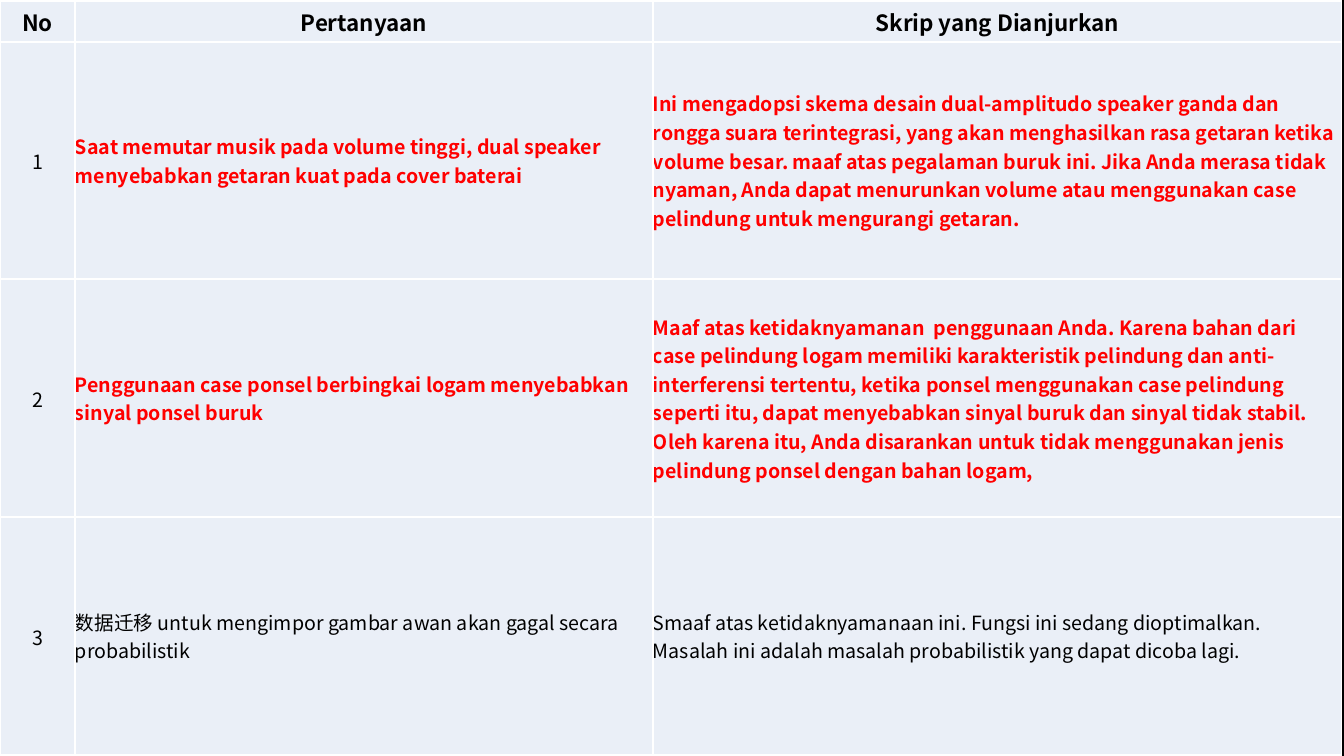
from pptx import Presentation
from pptx.dml.color import RGBColor
from pptx.enum import text
from pptx.oxml import parse_xml
from pptx.oxml.ns import nsdecls, qn
from pptx.util import Emu, Pt

HEADERS = ("No", "Pertanyaan", "Skrip yang Dianjurkan")
# question, recommended script, highlighted
ENTRIES = [
    ("Saat memutar musik pada volume tinggi, dual speaker menyebabkan getaran kuat "
     "pada cover baterai",
     "Ini mengadopsi skema desain dual-amplitudo speaker ganda dan rongga suara "
     "terintegrasi, yang akan menghasilkan rasa getaran ketika volume besar. maaf atas "
     "pegalaman buruk ini. Jika Anda merasa tidak nyaman, Anda dapat menurunkan volume "
     "atau menggunakan case pelindung untuk mengurangi getaran.",
     True),
    ("Penggunaan case ponsel berbingkai logam menyebabkan sinyal ponsel buruk",
     "Maaf atas ketidaknyamanan  penggunaan Anda. Karena bahan dari case pelindung logam "
     "memiliki karakteristik pelindung dan anti-interferensi tertentu, ketika ponsel "
     "menggunakan case pelindung seperti itu, dapat menyebabkan sinyal buruk dan sinyal "
     "tidak stabil. Oleh karena itu, Anda disarankan untuk tidak menggunakan jenis "
     "pelindung ponsel dengan bahan logam,",
     True),
    ("数据迁移 untuk mengimpor gambar awan akan gagal secara probabilistik",
     "Smaaf atas ketidaknyamanaan ini. Fungsi ini sedang dioptimalkan. Masalah ini adalah "
     "masalah probabilistik yang dapat dicoba lagi.",
     False),
]

FONT = "Noto Sans CJK SC"
BLACK, RED, WHITE, PALE_BLUE = "000000", "FF0000", "FFFFFF", "EAEFF7"
SLIDE_SIZE = (1344, 756)
TABLE_TOP = 1
COLUMN_WIDTHS = (75, 578, 689)
ROW_HEIGHTS = (41, 237, 238, 238)


def px(length):
    return Emu(round(length * 914400 / 100.8))


def color(value):
    return RGBColor.from_string(value)


def add_borders(cell):
    """Draw a 1 pt white line on all four sides, ahead of the cell's fill."""
    properties = cell._tc.get_or_add_tcPr()
    for index, side in enumerate(("lnL", "lnR", "lnT", "lnB")):
        properties.insert(index, parse_xml(
            f'<a:{side} {nsdecls("a")} w="{Pt(1)}"><a:solidFill>'
            f'<a:srgbClr val="{WHITE}"/></a:solidFill></a:{side}>'))


def fill_cell(cell, content, size, bold, ink, centered):
    cell.fill.solid()
    cell.fill.fore_color.rgb = color(PALE_BLUE)
    add_borders(cell)
    cell.vertical_anchor = text.MSO_ANCHOR.MIDDLE
    cell.margin_left = cell.margin_right = cell.margin_top = px(1 if centered else 0)
    cell.margin_bottom = 0

    cell.text_frame.text = content
    paragraph = cell.text_frame.paragraphs[0]
    paragraph.alignment = text.PP_ALIGN.CENTER if centered else text.PP_ALIGN.LEFT
    run = paragraph.runs[0]
    run.font.name = FONT
    run.font.size = Pt(size)
    run.font.bold = bold
    run.font.color.rgb = color(ink)
    east_asian = parse_xml(f'<a:ea {nsdecls("a")} typeface="{FONT}"/>')
    run._r.rPr.find(qn("a:latin")).addnext(east_asian)


def main():
    presentation = Presentation()
    presentation.slide_width, presentation.slide_height = map(px, SLIDE_SIZE)
    slide = presentation.slides.add_slide(presentation.slide_layouts[6])
    slide.background.fill.solid()
    slide.background.fill.fore_color.rgb = color(BLACK)

    table = slide.shapes.add_table(
        len(ROW_HEIGHTS), len(COLUMN_WIDTHS), 0, px(TABLE_TOP),
        px(sum(COLUMN_WIDTHS)), px(sum(ROW_HEIGHTS))).table
    for column, width in zip(table.columns, COLUMN_WIDTHS):
        column.width = px(width)
    for row, height in zip(table.rows, ROW_HEIGHTS):
        row.height = px(height)

    for column, header in enumerate(HEADERS):
        fill_cell(table.cell(0, column), header, 16, True, BLACK, True)
    for number, (question, script, highlighted) in enumerate(ENTRIES, start=1):
        fill_cell(table.cell(number, 0), str(number), 14, False, BLACK, True)
        ink = RED if highlighted else BLACK
        for column, content in enumerate((question, script), start=1):
            fill_cell(table.cell(number, column), content, 14, highlighted, ink, False)

    presentation.save("out.pptx")


if __name__ == "__main__":
    main()
